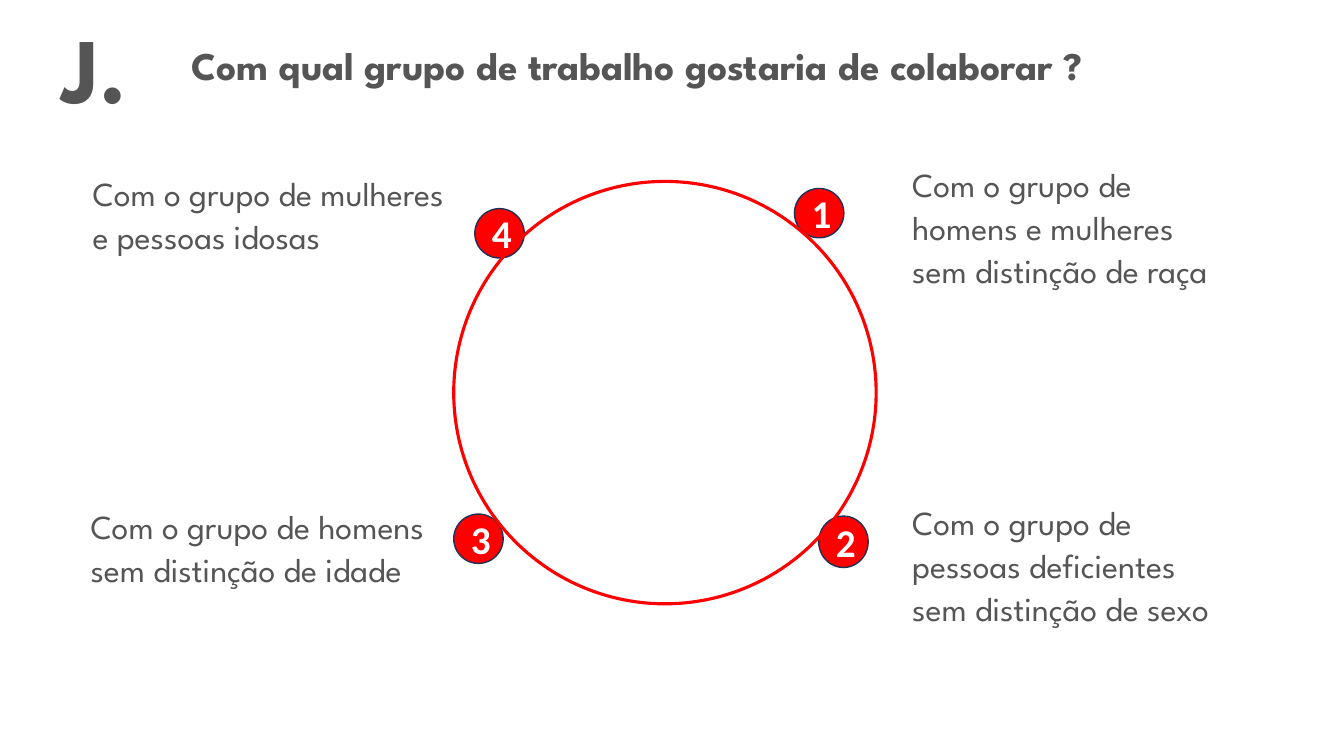
from pptx import Presentation
from pptx.dml.color import RGBColor
from pptx.enum.shapes import MSO_SHAPE
from pptx.enum.text import MSO_ANCHOR, MSO_AUTO_SIZE, PP_ALIGN
from pptx.util import Inches, Pt

OVAL, RECTANGLE = MSO_SHAPE.OVAL, MSO_SHAPE.RECTANGLE
TOP, MIDDLE = MSO_ANCHOR.TOP, MSO_ANCHOR.MIDDLE
LEFT, CENTER = PP_ALIGN.LEFT, PP_ALIGN.CENTER
GROW, FIXED = MSO_AUTO_SIZE.SHAPE_TO_FIT_TEXT, MSO_AUTO_SIZE.NONE

WIDTH, HEIGHT = Inches(13.33), Inches(7.5)
HEADING_FONT, NUMBER_FONT = "League Spartan", "Calibri"
GRAY, RED, NAVY, WHITE = "555555", "FF0000", "1E3256", "FFFFFF"

# Boxes are left, top, width, height in percent of the slide
LETTER_BOX = (3.83, 0.8, 9.68, 16.13)
TITLE_BOX = (13.5, 4.4, 75.77, 8)
RING_BOX = (33.76, 24, 31.43, 55.87)

# Number, badge box, answer, answer box
ANSWERS = [
    ("1", (59.11, 24.93, 3.68, 6.53),
     "Com o grupo de homens e mulheres sem distinção de raça", (67.14, 20.67, 23.71, 24.27)),
    ("2", (60.92, 68.27, 3.68, 6.8),
     "Com o grupo de pessoas deficientes sem distinção de sexo", (67.14, 65.33, 23.71, 24.27)),
    ("3", (33.76, 68, 3.68, 6.53),
     "Com o grupo de homens sem distinção de idade", (6, 65.87, 26.33, 18.53)),
    ("4", (35.33, 27.6, 3.68, 6.53),
     "Com o grupo de mulheres e pessoas idosas", (6.15, 21.87, 28.81, 18.53)),
]


def color(hex_value):
    return RGBColor.from_string(hex_value)


def place(box):
    left, top, width, height = box
    return (round(WIDTH * left / 100), round(HEIGHT * top / 100),
            round(WIDTH * width / 100), round(HEIGHT * height / 100))


def write(shape, text, size, font=HEADING_FONT, ink=GRAY, bold=False,
          align=LEFT, anchor=TOP, auto_size=GROW, line_spacing=1.0, space_after=0):
    frame = shape.text_frame
    frame.word_wrap = True
    frame.auto_size = auto_size
    frame.vertical_anchor = anchor
    paragraph = frame.paragraphs[0]
    paragraph.alignment = align
    paragraph.line_spacing = line_spacing
    paragraph.space_before = Pt(0)
    paragraph.space_after = Pt(space_after)
    run = paragraph.add_run()
    run.text = text
    run.font.name = font
    run.font.size = Pt(size)
    run.font.bold = bold
    run.font.color.rgb = color(ink)


def add_figure(slide, kind, box, fill=None, line=None, line_width=1):
    shape = slide.shapes.add_shape(kind, *place(box))
    shape.shadow.inherit = False
    if fill:
        shape.fill.solid()
        shape.fill.fore_color.rgb = color(fill)
    else:
        shape.fill.background()
    if line:
        shape.line.color.rgb = color(line)
        shape.line.width = Pt(line_width)
    else:
        shape.line.fill.background()
    return shape


def add_title(slide, text):
    title = slide.shapes.title
    title.left, title.top, title.width, title.height = place(TITLE_BOX)
    write(title, text, 28, bold=True, line_spacing=1.07, space_after=8)


def add_letter(slide, text):
    letter = slide.shapes.add_textbox(*place(LETTER_BOX))
    write(letter, text, 66, bold=True)


def add_badge(slide, number, box):
    badge = add_figure(slide, OVAL, box, RED, NAVY)
    write(badge, number, 28, NUMBER_FONT, WHITE, True, CENTER, MIDDLE, FIXED)


def add_answer(slide, text, box):
    answer = add_figure(slide, RECTANGLE, box, WHITE)
    write(answer, text, 24, line_spacing=1.07, space_after=8)


def main():
    presentation = Presentation()
    presentation.slide_width, presentation.slide_height = WIDTH, HEIGHT
    slide = presentation.slides.add_slide(presentation.slide_layouts[5])

    # Heading
    add_title(slide, "Com qual grupo de trabalho gostaria de colaborar ?")
    add_letter(slide, "J.")

    # Answers with their numbers
    for number, badge_box, text, answer_box in ANSWERS:
        add_badge(slide, number, badge_box)
        add_answer(slide, text, answer_box)

    # Ring that joins the numbers
    add_figure(slide, OVAL, RING_BOX, line=RED, line_width=2.25)

    presentation.save("out.pptx")


if __name__ == "__main__":
    main()
